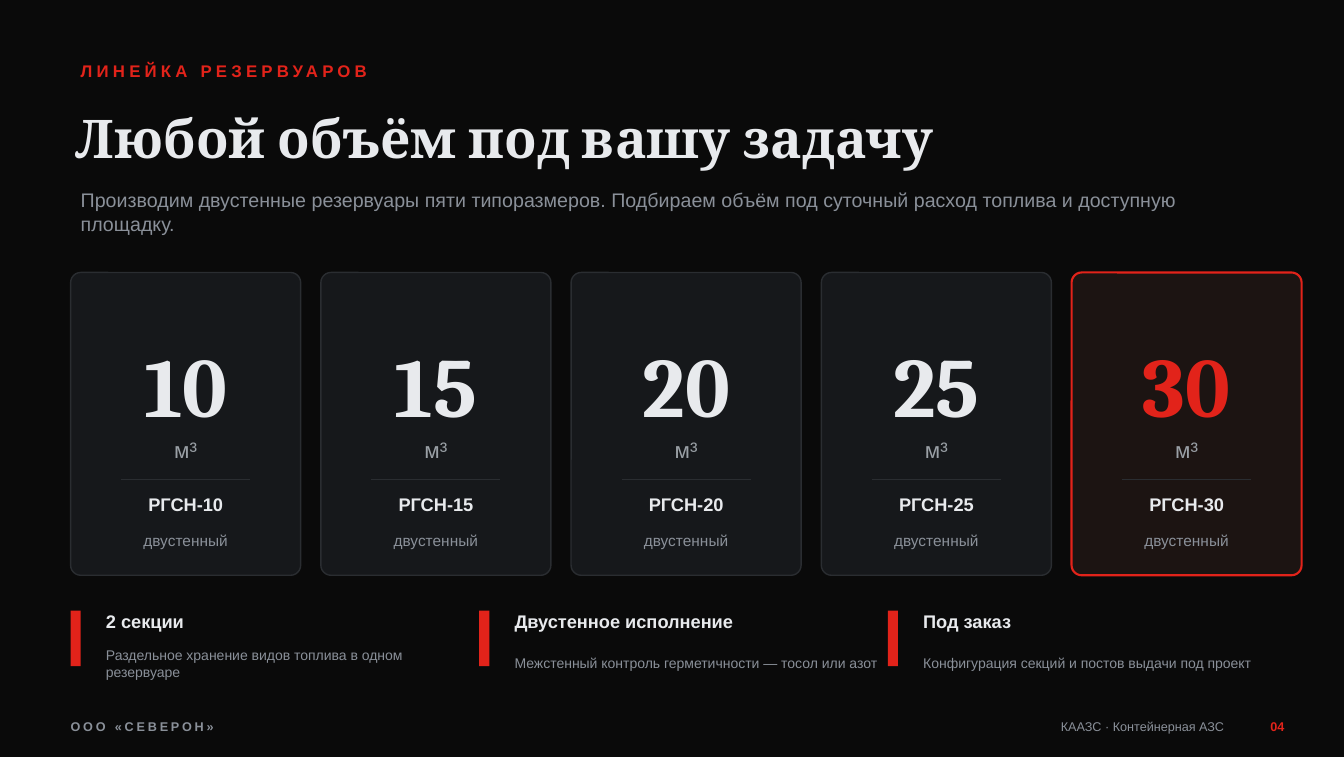
from pptx import Presentation
from pptx.dml.color import RGBColor
from pptx.enum.shapes import MSO_CONNECTOR, MSO_SHAPE
from pptx.enum.text import MSO_ANCHOR, MSO_AUTO_SIZE, PP_ALIGN as AL
from pptx.oxml.ns import qn
from pptx.util import Pt
from lxml import etree

BG = RGBColor(0x0A, 0x0A, 0x0A)
RED = RGBColor(0xE2, 0x23, 0x1A)
WHITE = RGBColor(0xE8, 0xEA, 0xED)
GRAY = RGBColor(0x8A, 0x90, 0x99)
UNIT_GRAY = RGBColor(0x9A, 0xA0, 0xA6)
CARD = RGBColor(0x16, 0x18, 0x1B)
CARD_RED = RGBColor(0x1C, 0x14, 0x12)
EDGE = RGBColor(0x2A, 0x2D, 0x31)

LEFT = 50.4
INSET = 3.6
VOLUMES = [10, 15, 20, 25, 30]
FEATURES = [
    ("2 секции", "Раздельное хранение видов топлива в одном резервуаре", 28.8),
    ("Двустенное исполнение", "Межстенный контроль герметичности — тосол или азот", 18),
    ("Под заказ", "Конфигурация секций и постов выдачи под проект", 18),
]


def put_text(sp, x, y, w, h, text, size, color, bold=False,
             font="Arial", align=AL.LEFT, spacing=0):
    """Place a text shape and format its single run."""
    sp.left, sp.top, sp.width, sp.height = Pt(x), Pt(y), Pt(w), Pt(h)
    tf = sp.text_frame
    tf.text = text
    tf.word_wrap = True
    tf.auto_size = MSO_AUTO_SIZE.SHAPE_TO_FIT_TEXT
    tf.vertical_anchor = MSO_ANCHOR.MIDDLE
    tf.margin_left = tf.margin_right = Pt(INSET)
    tf.margin_top = tf.margin_bottom = Pt(INSET)
    p = tf.paragraphs[0]
    p.alignment = align
    r = p.runs[0]
    r.font.name, r.font.size, r.font.bold = font, Pt(size), bold
    r.font.color.rgb = color
    if spacing:
        r.font._element.set("spc", str(spacing * 100))


def add_text(s, x, y, w, h, *args, **kwargs):
    sp = s.shapes.add_textbox(Pt(x), Pt(y), Pt(w), Pt(h))
    put_text(sp, x, y, w, h, *args, **kwargs)


def add_block(s, kind, x, y, w, h, fill):
    sp = s.shapes.add_shape(kind, Pt(x), Pt(y), Pt(w), Pt(h))
    sp.shadow.inherit = False
    sp.fill.solid()
    sp.fill.fore_color.rgb = fill
    sp.line.fill.background()
    return sp


def add_rule(s, x, y, w):
    line = s.shapes.add_connector(MSO_CONNECTOR.STRAIGHT, Pt(x), Pt(y), Pt(x + w), Pt(y))
    line.line.color.rgb = EDGE
    line.line.width = Pt(1)
    etree.SubElement(line._element.spPr, qn("a:effectLst"))


def add_header(s, x, y):
    add_text(s, x + INSET, y, 568.8, 20.88, "ЛИНЕЙКА РЕЗЕРВУАРОВ", 12, RED, True, spacing=3)
    put_text(s.shapes.title, x, y + 30.96, 856.8, 52.56,
             "Любой объём под вашу задачу", 38, WHITE, True, font="Cambria")
    add_text(s, x + INSET, y + 91.44, 820.8, 38.88,
             "Производим двустенные резервуары пяти типоразмеров. "
             "Подбираем объём под суточный расход топлива и доступную площадку.", 14, GRAY)


def add_tank_card(s, x, y, w, h, volume, accent):
    card = add_block(s, MSO_SHAPE.ROUNDED_RECTANGLE, x, y, w, h, CARD_RED if accent else CARD)
    card.adjustments[0] = 0.044
    card.line.color.rgb = RED if accent else EDGE
    card.line.width = Pt(1.5 if accent else 1)
    # Number, unit, model and wall type, centred under each other
    rows = [
        (39.6, 79.2, str(volume), 60, RED if accent else WHITE, True, "Cambria"),
        (113.76, 24.48, "м³", 16, UNIT_GRAY, False, "Arial"),
        (154.8, 21.6, f"РГСН-{volume}", 13, WHITE, True, "Arial"),
        (181.44, 18.72, "двустенный", 11, GRAY, False, "Arial"),
    ]
    for dy, row_h, *style in rows:
        add_text(s, x + INSET, y + dy, w - 2 * INSET, row_h, *style, align=AL.CENTER)
    add_rule(s, x + 36, y + 147.6, w - 72)


def add_feature(s, x, y, head, note, note_h):
    add_block(s, MSO_SHAPE.RECTANGLE, x, y, 7.2, 39.6, RED)
    add_text(s, x + 21.6, y - 3.6, 259.2, 21.6, head, 13, WHITE, True)
    add_text(s, x + 21.6, y + 37.6 - note_h / 2, 270, note_h, note, 10, GRAY)


def add_footer(s, x, y):
    h = 16.56
    add_text(s, x, y, 352.8, h, "ООО «СЕВЕРОН»", 9, GRAY, True, spacing=2)
    add_text(s, x + 513.36, y, 316.8, h, "КААЗС · Контейнерная АЗС", 9, GRAY, align=AL.RIGHT)
    add_text(s, x + 848.16, y, 25.2, h, "04", 9, RED, True, align=AL.RIGHT)


def main():
    prs = Presentation()
    prs.slide_width, prs.slide_height = Pt(959.04), Pt(540)
    s = prs.slides.add_slide(prs.slide_layouts[5])
    s.background.fill.solid()
    s.background.fill.fore_color.rgb = BG

    add_header(s, LEFT, 40.32)
    # Row of tank sizes, the largest one highlighted
    card_w, gap = 164.16, 14.4
    for i, volume in enumerate(VOLUMES):
        add_tank_card(s, LEFT + i * (card_w + gap), 194.4, card_w, 216,
                      volume, volume == VOLUMES[-1])
    # Row of features
    for i, feature in enumerate(FEATURES):
        add_feature(s, LEFT + i * 291.6, 435.6, *feature)
    add_footer(s, LEFT - INSET, 509.76)
    prs.save("out.pptx")


if __name__ == "__main__":
    main()
